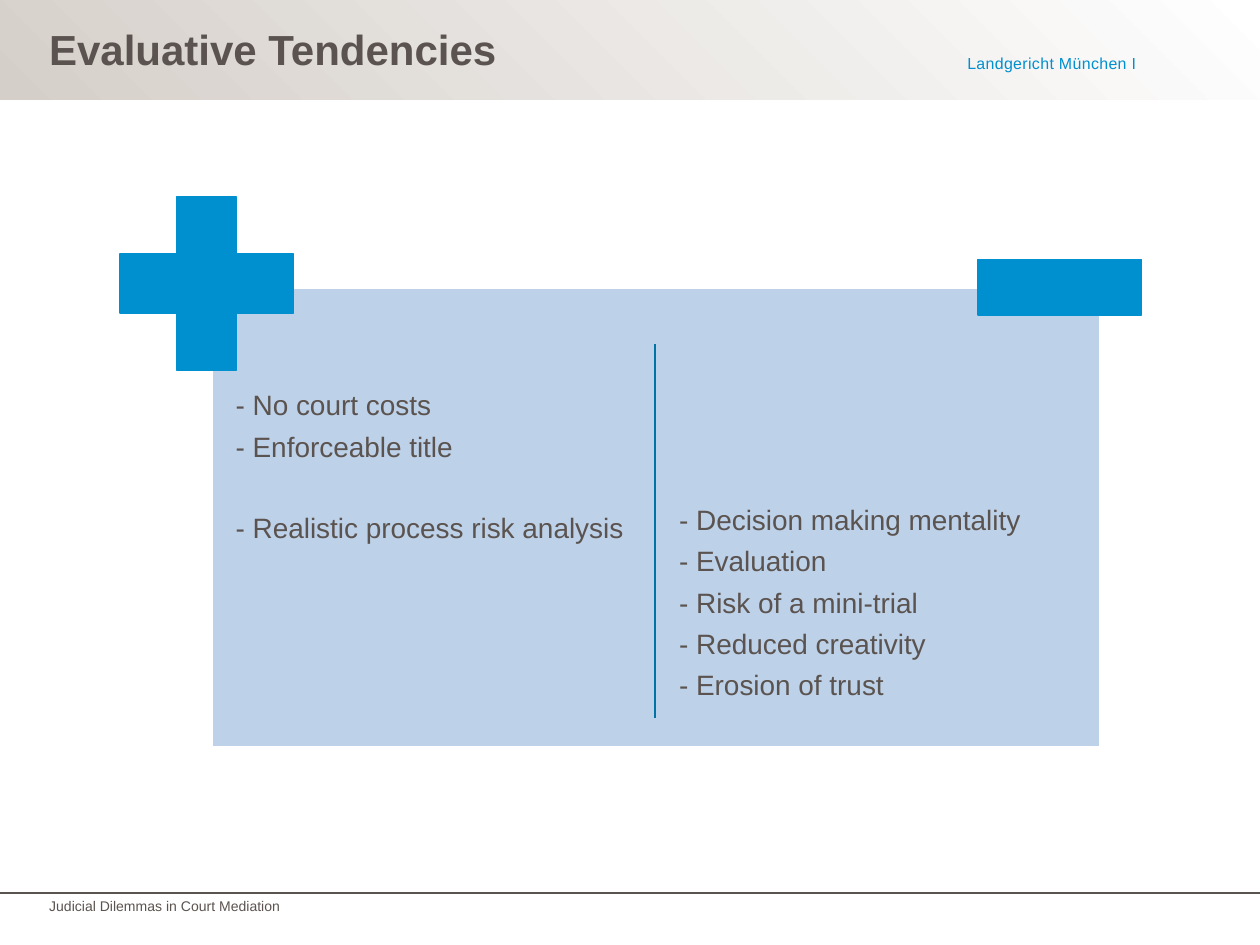
from lxml import etree
from pptx import Presentation
from pptx.dml.color import RGBColor
from pptx.enum import shapes, text
from pptx.oxml import parse_xml
from pptx.oxml.ns import nsdecls, qn
from pptx.util import Inches, Pt

GRAY, BLUE, PALE, WHITE = "5B534F", "008FCF", "BDD1E9", "FFFFFF"
PROS = ["- No court costs", "- Enforceable title", "- Realistic process risk analysis"]
CONS = ["- Decision making mentality", "- Evaluation", "- Risk of a mini-trial",
        "- Reduced creativity", "- Erosion of trust"]
LIST = dict(line_spacing=0.9, space_after=Pt(6.3))


def color(code):
    return RGBColor.from_string(code)


def assign(item, values):
    for name, value in values.items():
        setattr(item, name, value)


def add_box(slide, area, lines, size, tint=GRAY, bold=False, inset=0,
            anchor=text.MSO_ANCHOR.TOP, form=None):
    frame = slide.shapes.add_textbox(*map(Inches, area)).text_frame
    sides = ("left", "top", "right", "bottom")
    assign(frame, {f"margin_{side}": Inches(inset) for side in sides})
    assign(frame, dict(word_wrap=True, vertical_anchor=anchor))
    frame.text = "\n".join(lines)
    for para in frame.paragraphs:
        assign(para, form or {})
        for run in para.runs:
            assign(run.font, dict(name="Arial", size=Pt(size), bold=bold))
            run.font.color.rgb = color(tint)
    return frame.paragraphs


def add_block(slide, kind, area, fill, edge):
    block = slide.shapes.add_shape(kind, *map(Inches, area))
    block.shadow.inherit = False
    block.fill.solid()
    block.fill.fore_color.rgb = color(fill)
    block.line.color.rgb = color(edge)
    block.line.width = Pt(1)
    return block


def add_rule(slide, start, end, tint):
    rule = slide.shapes.add_connector(
        shapes.MSO_CONNECTOR.STRAIGHT, *map(Inches, start + end))
    rule.line.color.rgb = color(tint)
    rule.line.width = Pt(1)
    etree.SubElement(rule._element.spPr, qn("a:effectLst"))


def add_band(slide):
    band = add_block(slide, shapes.MSO_SHAPE.RECTANGLE, (0, 0, 10, 0.79), WHITE, WHITE)
    band.line.fill.background()
    band.fill.gradient()
    for stop, tint in zip(band.fill.gradient_stops, ("D5CFC9", WHITE)):
        stop.color.rgb = color(tint)
    grad = band._element.spPr.find(qn("a:gradFill"))
    grad.replace(grad.find(qn("a:lin")), parse_xml(
        f'<a:path {nsdecls("a")} path="circle">'
        '<a:fillToRect t="100000" r="100000"/></a:path>'))


def add_frame(slide):
    add_band(slide)
    court = add_box(slide, (6.97, 0.23, 2.05, 0.35), ["Landgericht München I"], 9.1, BLUE,
                    anchor=text.MSO_ANCHOR.BOTTOM,
                    form=dict(alignment=text.PP_ALIGN.RIGHT, line_spacing=Pt(9.4)))
    court[0].runs[0].font._element.set("spc", "20")
    add_rule(slide, (0, 7.09), (10, 7.09), GRAY)
    add_box(slide, (0.39, 0.19, 6.1, 0.45), ["Evaluative Tendencies"], 24, bold=True)
    add_box(slide, (0.39, 7.12, 7.28, 0.13), ["Judicial Dilemmas in Court Mediation"], 8,
            form=dict(line_spacing=Pt(9.6)))


def add_scale(slide):
    rect = shapes.MSO_SHAPE.RECTANGLE
    add_block(slide, rect, (1.68, 2.29, 7.05, 3.64), PALE, WHITE)
    pros = add_box(slide, (1.84, 3.08, 3.22, 2.73), PROS, 16, inset=0.03, form=LIST)
    pros[-1].space_before = Pt(22.9)
    add_box(slide, (5.36, 3.99, 3.15, 1.85), CONS, 16, inset=0.03, form=LIST)
    plus = add_block(slide, shapes.MSO_SHAPE.CROSS, (0.95, 1.56, 1.38, 1.38), BLUE, BLUE)
    plus.adjustments[0] = 0.33
    add_block(slide, rect, (7.76, 2.06, 1.3, 0.44), BLUE, BLUE)
    add_rule(slide, (5.2, 2.73), (5.2, 5.7), "0073A6")


def main():
    deck = Presentation()
    assign(deck, dict(slide_width=Inches(10), slide_height=Inches(7.5)))
    slide = deck.slides.add_slide(deck.slide_layouts[6])
    add_frame(slide)
    add_scale(slide)
    deck.save("out.pptx")


if __name__ == "__main__":
    main()
